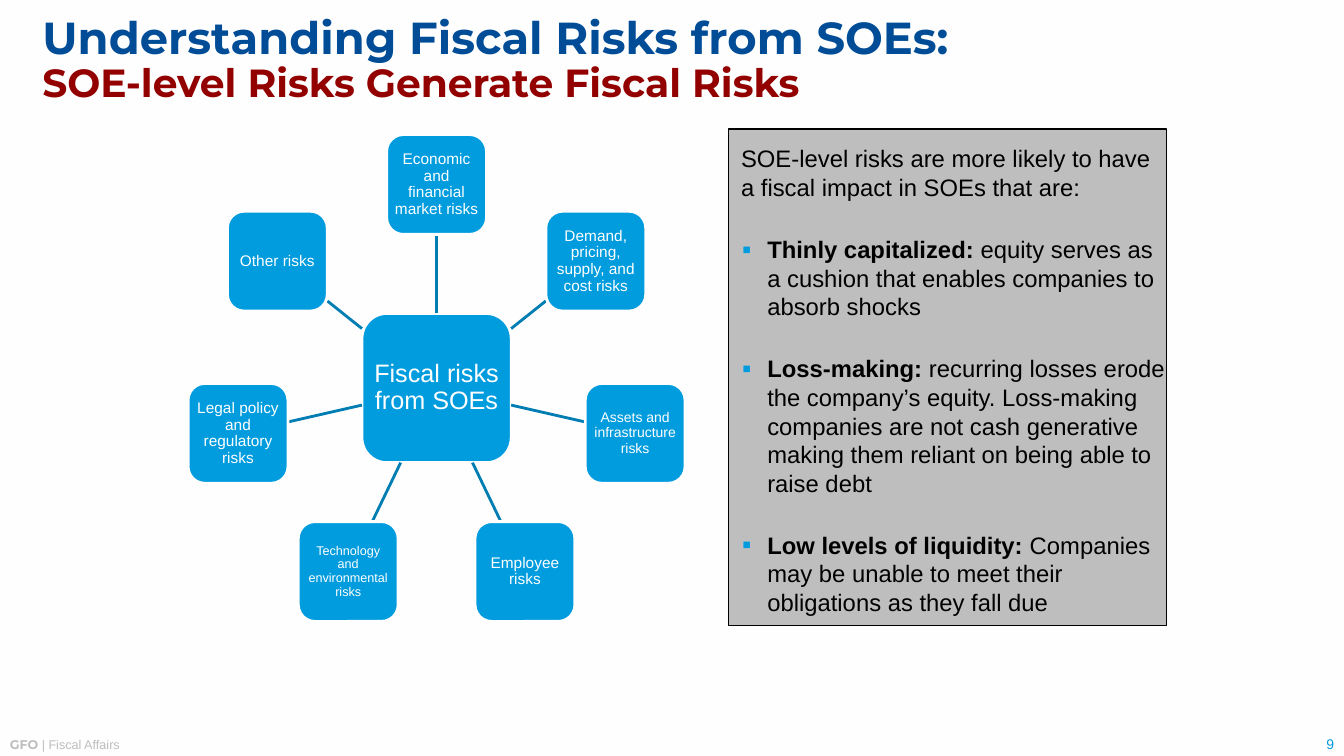
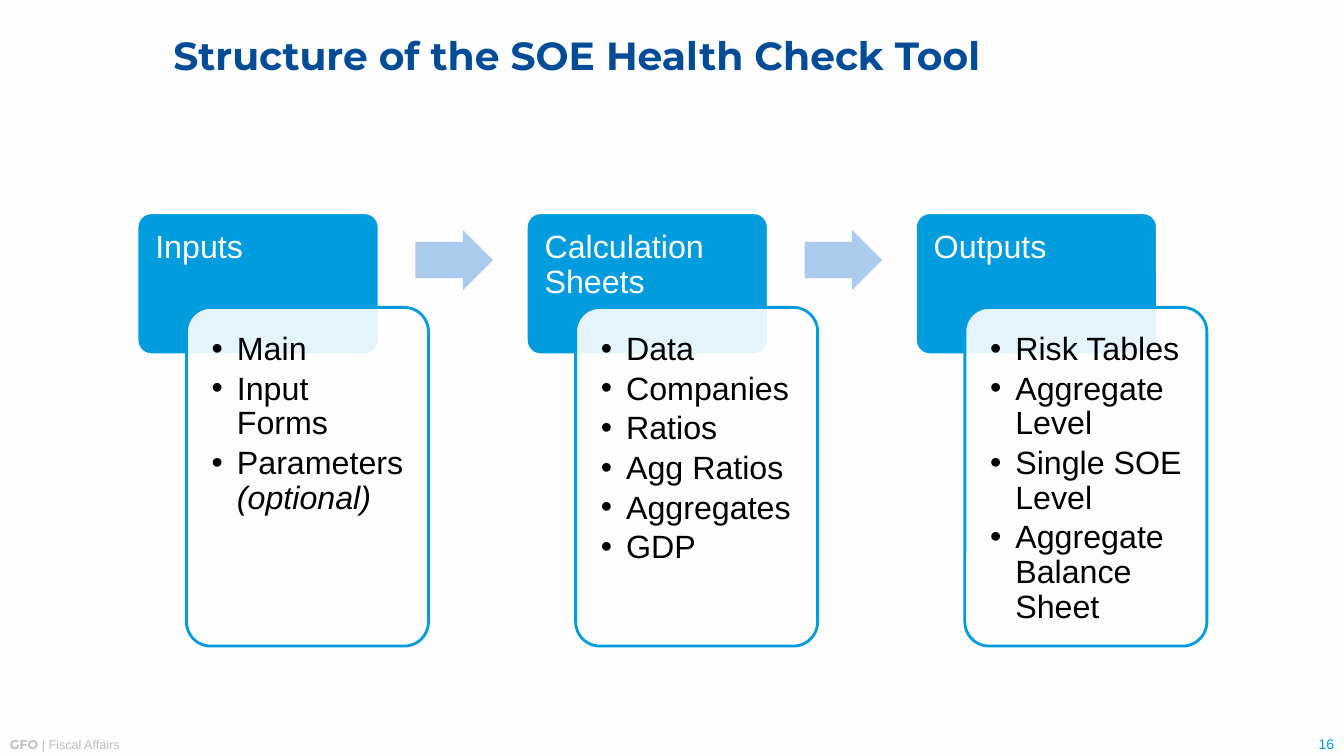
"""Builds two slides on fiscal risks from SOEs and the health check tool."""
from copy import deepcopy
from math import cos, pi, sin
from typing import NamedTuple, Optional

from lxml.etree import SubElement
from pptx import Presentation
from pptx.dml.color import RGBColor
from pptx.enum.shapes import MSO_CONNECTOR, MSO_SHAPE
from pptx.enum.text import MSO_ANCHOR, MSO_AUTO_SIZE, PP_ALIGN
from pptx.oxml.ns import qn
from pptx.util import Inches, Pt

WHITE = RGBColor(0xFE, 0xFE, 0xFE)
BLACK = RGBColor(0x00, 0x00, 0x00)
GREY = RGBColor(0xBE, 0xBE, 0xBE)
SKY = RGBColor(0x00, 0x9C, 0xDE)
SPOKE = RGBColor(0x00, 0x7D, 0xB2)
PALE = RGBColor(0xAB, 0xCB, 0xEC)
NAVY = RGBColor(0x00, 0x4C, 0x97)
MAROON = RGBColor(0x92, 0x00, 0x00)
HEAD_FONT, TEXT_FONT = "Montserrat", "Arial"


class Run(NamedTuple):
    text: str
    bold: bool = False
    italic: bool = False
    size: Optional[float] = None
    color: Optional[RGBColor] = None
    font: Optional[str] = None


class Bullet(NamedTuple):
    char: str
    left: float
    hang: float
    color: Optional[RGBColor] = None
    percent: int = 100


class Node(NamedTuple):
    text: str
    size: int = 11


class Stage(NamedTuple):
    name: str
    items: list


NODES = [
    Node("Economic and financial market risks"),
    Node("Demand, pricing, supply, and cost risks"),
    Node("Assets and infrastructure risks", 10),
    Node("Employee risks"),
    Node("Technology and environmental risks", 9),
    Node("Legal policy and regulatory risks"),
    Node("Other risks"),
]
TRAITS = [
    ("Thinly capitalized:", " equity serves as a cushion that enables companies to absorb shocks"),
    ("Loss-making:", " recurring losses erode the company’s equity. Loss-making companies are "
                     "not cash generative making them reliant on being able to raise debt"),
    ("Low levels of liquidity:", " Companies may be unable to meet their obligations "
                                 "as they fall due"),
]
STAGES = [
    Stage("Inputs", ["Main", "Input Forms", [Run("Parameters "), Run("(optional)", italic=True)]]),
    Stage("Calculation Sheets",
          ["Data", "Companies", "Ratios", "Agg Ratios", "Aggregates", "GDP"]),
    Stage("Outputs",
          ["Risk Tables", "Aggregate Level", "Single SOE Level", "Aggregate Balance Sheet"]),
]


def place(sp, x: float, y: float, w: float, h: float) -> None:
    """Move and size a shape in inches."""
    sp.left, sp.top, sp.width, sp.height = Inches(x), Inches(y), Inches(w), Inches(h)


def set_bullet(p, bullet: Optional[Bullet], indent: float) -> None:
    """Set the indent of a paragraph and its bullet, if any."""
    pPr = p._p.get_or_add_pPr()
    left, hang = (bullet.left, bullet.hang) if bullet else (indent, 0)
    pPr.set("marL", str(Inches(left)))
    pPr.set("indent", str(-Inches(hang)))
    if not bullet:
        SubElement(pPr, qn("a:buNone"))
        return
    if bullet.color is not None:
        clr = SubElement(pPr, qn("a:buClr"))
        SubElement(clr, qn("a:srgbClr")).set("val", str(bullet.color))
    SubElement(pPr, qn("a:buSzPct")).set("val", str(bullet.percent * 1000))
    SubElement(pPr, qn("a:buFont")).set("typeface", TEXT_FONT)
    SubElement(pPr, qn("a:buChar")).set("char", bullet.char)


def add_text(sp, paras: list, *, size: float, color: RGBColor, font: str = TEXT_FONT,
             align=PP_ALIGN.LEFT, anchor=MSO_ANCHOR.TOP, insets=(0, 0, 0, 0),
             spacing: float = 1, before: float = 0, after: float = 0,
             bullet: Optional[Bullet] = None, intro: bool = False, indent: float = 0) -> None:
    """Fill a shape with paragraphs, each a string or a list of runs."""
    tf = sp.text_frame
    tf.word_wrap, tf.auto_size, tf.vertical_anchor = True, MSO_AUTO_SIZE.NONE, anchor
    tf.margin_left, tf.margin_top, tf.margin_right, tf.margin_bottom = map(Inches, insets)
    for i, para in enumerate(paras):
        p = tf.add_paragraph() if i else tf.paragraphs[0]
        p.alignment, p.line_spacing = align, spacing
        p.space_before, p.space_after = Pt(before), Pt(after)
        set_bullet(p, None if intro and i == 0 else bullet, indent)
        for run in [Run(para)] if isinstance(para, str) else para:
            r = p.add_run()
            r.text = run.text.rstrip("\n")
            r.font.name, r.font.size = run.font or font, Pt(run.size or size)
            r.font.bold, r.font.italic = run.bold, run.italic
            r.font.color.rgb = color if run.color is None else run.color
            if run.text.endswith("\n"):
                p.add_line_break()
                p._p[-1].append(deepcopy(r._r.rPr))


def add_box(s, kind, x: float, y: float, w: float, h: float, fill: RGBColor, *,
            line: Optional[RGBColor] = None, adj=(), opacity: int = 100):
    """Draw a flat preset shape."""
    sp = s.shapes.add_shape(kind, Inches(x), Inches(y), Inches(w), Inches(h))
    sp.shadow.inherit = False
    sp.fill.solid()
    sp.fill.fore_color.rgb = fill
    if line is None:
        sp.line.fill.background()
    else:
        sp.line.color.rgb, sp.line.width = line, Pt(2)
    for i, value in enumerate(adj):
        sp.adjustments[i] = value
    if opacity < 100:
        clr = sp._element.spPr.find(qn("a:solidFill")).find(qn("a:srgbClr"))
        SubElement(clr, qn("a:alpha")).set("val", str(opacity * 1000))
    return sp


def add_spoke(s, x1: float, y1: float, x2: float, y2: float) -> None:
    """Draw a straight line without shadow."""
    ln = s.shapes.add_connector(MSO_CONNECTOR.STRAIGHT, *map(Inches, (x1, y1, x2, y2)))
    ln.line.color.rgb, ln.line.width = SPOKE, Pt(2)
    SubElement(ln._element.spPr, qn("a:effectLst"))


def add_slide(prs, layout: int, number: int, x: float, y: float, title: list):
    """Add a slide with its title, footer and page number."""
    s = prs.slides.add_slide(prs.slide_layouts[layout])
    place(s.shapes.title, x, y, 10.62, 1.07)
    add_text(s.shapes.title, [title], size=28, color=NAVY, font=HEAD_FONT,
             anchor=MSO_ANCHOR.MIDDLE, spacing=0.9)
    pad = (0.1, 0.05, 0.1, 0.05)
    footer = s.shapes.add_textbox(0, Inches(7.26), Inches(10), Inches(0.25))
    add_text(footer, [[Run("GFO ", bold=True, font=HEAD_FONT), Run("| Fiscal Affairs")]],
             size=9, color=GREY, insets=pad)
    page = s.shapes.add_textbox(Inches(12.01), Inches(7.24), Inches(1.32), Inches(0.27))
    add_text(page, [str(number)], size=10, color=SKY, align=PP_ALIGN.RIGHT,
             anchor=MSO_ANCHOR.BOTTOM, insets=pad)
    return s


def add_tile(s, cx: float, cy: float, side: float, text: str, size: int) -> None:
    """Draw a rounded square with centred text."""
    sp = add_box(s, MSO_SHAPE.ROUNDED_RECTANGLE, cx - side / 2, cy - side / 2, side, side,
                 SKY, line=WHITE)
    add_text(sp, [text], size=size, color=WHITE, align=PP_ALIGN.CENTER,
             anchor=MSO_ANCHOR.MIDDLE, insets=(0.03, 0, 0.03, 0), spacing=0.9,
             after=0.35 * size)


def add_wheel(s, cx: float, cy: float, radius: float, hub: float, side: float) -> None:
    """Draw the hub, with the nodes at equal angles around it."""
    add_tile(s, cx, cy, hub, "Fiscal risks from SOEs", 18)
    for i, node in enumerate(NODES):
        angle = 2 * pi * i / len(NODES)
        dx, dy = sin(angle), -cos(angle)
        reach = 2 * max(abs(dx), abs(dy))
        start, end = hub / reach, radius - side / reach
        add_spoke(s, cx + start * dx, cy + start * dy, cx + end * dx, cy + end * dy)
        add_tile(s, cx + radius * dx, cy + radius * dy, side, node.text, node.size)


def build_risks(prs) -> None:
    """Build the slide on risk sources."""
    s = add_slide(prs, 1, 9, 0.42, 0.07, [
        Run("Understanding Fiscal Risks from SOEs:\n", bold=True, size=32),
        Run("SOE-level Risks Generate Fiscal Risks", bold=True, color=MAROON)])
    body = s.placeholders[1]
    place(body, 7.23, 1.28, 4.34, 4.93)
    body.fill.solid()
    body.fill.fore_color.rgb = GREY
    body.line.color.rgb, body.line.width = BLACK, Pt(0.75)
    paras = ["SOE-level risks are more likely to have a fiscal impact in SOEs that are:"]
    paras += [[Run(lead, bold=True), Run(rest)] for lead, rest in TRAITS]
    add_text(body, paras, size=17, color=BLACK, insets=(0, 0.15, 0, 0), before=12, after=12,
             bullet=Bullet("▪", 0.38, 0.25, SKY, 110), intro=True, indent=0.12)
    add_wheel(s, 4.33, 3.85, 2.02, 1.48, 0.99)


def build_structure(prs) -> None:
    """Build the slide on the structure of the tool."""
    s = add_slide(prs, 5, 16, 1.72, 0.04,
                  [Run("Structure of the SOE Health Check Tool", bold=True)])
    for i, stage in enumerate(STAGES):
        x = 1.36 + 3.86 * i
        head = add_box(s, MSO_SHAPE.ROUNDED_RECTANGLE, x, 2.11, 2.4, 1.41, SKY,
                       line=WHITE, adj=(0.1,))
        add_text(head, [stage.name], size=23, color=WHITE, spacing=0.9,
                 insets=(0.14, 0.14, 0.14, 0.1))
        card = add_box(s, MSO_SHAPE.ROUNDED_RECTANGLE, x + 0.49, 3.05, 2.4, 3.36, WHITE,
                       line=SKY, adj=(0.1,), opacity=90)
        add_text(card, stage.items, size=23, color=BLACK, spacing=0.9, after=3.5,
                 insets=(0.18, 0.18, 0.16, 0.18), bullet=Bullet("•", 0.25, 0.25))
        if i < len(STAGES) - 1:
            add_box(s, MSO_SHAPE.RIGHT_ARROW, x + 2.76, 2.28, 0.77, 0.6, PALE, adj=(0.6, 0.5))


def main() -> None:
    """Build and save the presentation."""
    prs = Presentation()
    prs.slide_width, prs.slide_height = Inches(13.33), Inches(7.5)
    fill = prs.slide_master.background.fill
    fill.solid()
    fill.fore_color.rgb = WHITE
    build_risks(prs)
    build_structure(prs)
    prs.save("out.pptx")


if __name__ == "__main__":
    main()
